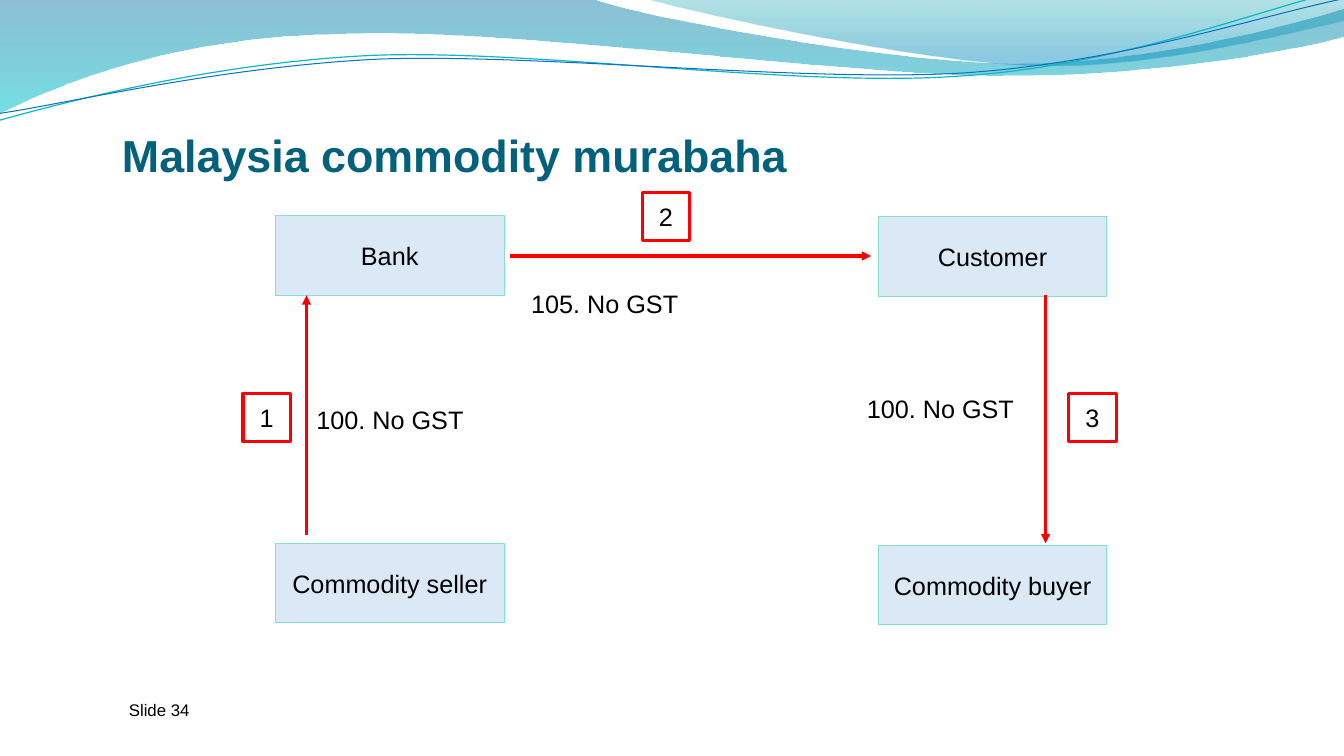
import pptx
import pptx.util
import pptx.dml.color
import pptx.enum.shapes
import pptx.enum.text
import pptx.oxml
import pptx.oxml.ns

Inches = pptx.util.Inches
ANCHOR = pptx.enum.text.MSO_ANCHOR
ALIGN = pptx.enum.text.PP_ALIGN
RECTANGLE = pptx.enum.shapes.MSO_SHAPE.RECTANGLE
STRAIGHT = pptx.enum.shapes.MSO_CONNECTOR.STRAIGHT
QN = pptx.oxml.ns.qn

COLORS = {name: pptx.dml.color.RGBColor.from_string(value) for name, value in {
    "title": "04617B", "text": "000000", "arrow": "FF0000",
    "box": "0F6FC6", "box_edge": "85DFD0",
    "wave_top": "0074A1", "wave_bottom": "00C6CF",
    "crest_top": "00A1A9", "crest_bottom": "008BBF",
    "teal_line": "0AB8BF", "blue_line": "0F6FC6",
}.items()}

presentation = pptx.Presentation()
presentation.slide_width = Inches(13.33)
presentation.slide_height = Inches(7.5)
slide = presentation.slides.add_slide(presentation.slide_layouts[6])
shapes = slide.shapes


def write(shape, text, size, color="text", bold=False, align=ALIGN.LEFT):
    frame = shape.text_frame
    frame.text = text
    frame.paragraphs[0].alignment = align
    font = frame.paragraphs[0].runs[0].font
    font.name, font.size, font.bold = "Arial", pptx.util.Pt(size), bold
    font.color.rgb = COLORS[color]
    return frame


def draw_curve(start, segments, closed):
    """Join straight lines (2 numbers) and Bezier curves (6 numbers)."""
    points = [(Inches(segment[i]), Inches(segment[i + 1]))
              for segment in segments for i in range(0, len(segment), 2)]
    builder = shapes.build_freeform(Inches(start[0]), Inches(start[1]))
    builder.add_line_segments(points, close=closed)
    shape = builder.convert_to_shape()
    shape.shadow.inherit = False
    # Merge the three points of each curve into one Bezier element
    steps = iter(list(shape.element.spPr.iter(QN("a:lnTo"))))
    for segment in segments:
        nodes = [next(steps) for _ in range(len(segment) // 2)]
        if len(nodes) == 3:
            curve = nodes[0].makeelement(QN("a:cubicBezTo"), {})
            nodes[0].addprevious(curve)
            for node in nodes:
                curve.append(node[0])
                node.getparent().remove(node)
    return shape


# Header waves: start, segments, gradient stops (position, colour, opacity)
waves = [
    ((0, 0), [(5.87, -0.01),
              (6.34, 0.17, 8.85, 0.63, 10.11, 0.63),
              (11.38, 0.63, 12.78, 0.26, 13.33, 0.09),
              (13.35, 0.36),
              (13.11, 0.44, 11.6, 0.76, 9.94, 0.75),
              (8.29, 0.75, 5.09, 0.28, 3.43, 0.34),
              (1.72, 0.36, 0.61, 0.83, -0.01, 1.13)],
     [(0, "wave_top", 45), (1, "wave_bottom", 55)]),
    ((6.39, -0.01), [(6.79, 0.11, 9.09, 0.62, 10.25, 0.65),
                     (11.41, 0.69, 12.82, 0.32, 13.33, 0.21),
                     (13.33, 0)],
     [(0, "crest_top", 30), (0.8, "crest_bottom", 45)]),
]
for start, segments, stops in waves:
    wave = draw_curve(start, segments, True)
    wave.line.fill.background()
    wave.fill.gradient()
    wave.fill.gradient_angle = 270
    for stop, (position, color, _) in zip(wave.fill.gradient_stops, stops):
        stop.position = position
        stop.color.rgb = COLORS[color]
    for node, (_, _, opacity) in zip(wave.element.spPr.iter(QN("a:srgbClr")), stops):
        node.append(node.makeelement(QN("a:alpha"), {"val": str(opacity * 1000)}))

# Thin lines under the waves, slightly tilted
wave_lines = [
    ((-0.03, 0.88), [(0.63, 0.73, 2.11, 0.41, 3.69, 0.41),
                     (5.28, 0.42, 7.88, 0.93, 9.49, 0.89),
                     (11.09, 0.87, 12.54, 0.36, 13.33, 0.22)], "teal_line", 0.85),
    ((-0.02, 0.81), [(0.62, 0.75, 2.18, 0.45, 3.78, 0.45),
                     (5.37, 0.47, 7.95, 0.88, 9.54, 0.86),
                     (11.14, 0.83, 12.56, 0.42, 13.36, 0.3)], "blue_line", 0.75),
]
for start, segments, color, width in wave_lines:
    wave_line = draw_curve(start, segments, False)
    wave_line.rotation = 357.3
    wave_line.fill.background()
    wave_line.line.color.rgb = COLORS[color]
    wave_line.line.width = pptx.util.Pt(width)

# Title
title = shapes.add_textbox(Inches(1.21), Inches(0.97), Inches(7.43), Inches(0.83))
frame = write(title, "Malaysia commodity murabaha", 32, "title", bold=True)
frame.word_wrap = True
frame.vertical_anchor = ANCHOR.BOTTOM
frame.margin_left = frame.margin_right = frame.margin_bottom = 0

# Parties and step numbers: text, left, top
left_column, right_column, badge_row = 2.73, 8.71, 3.9
parties = [("Bank", left_column, 2.14), ("Commodity seller", left_column, 5.39),
           ("Commodity buyer", right_column, 5.41), ("Customer", right_column, 2.15)]
badges = [("1", 2.41, badge_row), ("3", 10.6, badge_row), ("2", 6.37, 1.91)]
for group, width, height, edge, edge_width in (
        (parties, 2.27, 0.79, "box_edge", 0.75), (badges, 0.47, 0.48, "arrow", 2.25)):
    for text, left, top in group:
        box = shapes.add_shape(RECTANGLE, Inches(left), Inches(top),
                               Inches(width), Inches(height))
        box.shadow.inherit = False
        box.line.color.rgb = COLORS[edge]
        box.line.width = pptx.util.Pt(edge_width)
        if group is parties:
            box.fill.solid()
            box.fill.fore_color.rgb = COLORS["box"]
            node = box.element.spPr.find(QN("a:solidFill")).find(QN("a:srgbClr"))
            node.append(node.makeelement(QN("a:alpha"), {"val": "15000"}))
        else:
            box.fill.background()
        frame = write(box, text, 18, align=ALIGN.CENTER)
        frame.word_wrap = False
        frame.vertical_anchor = ANCHOR.MIDDLE
        frame.margin_left = frame.margin_right = Inches(0.07)
        frame.margin_top = frame.margin_bottom = 0

# Arrows: from x, from y, to x, to y
for ends in ((10.37, 2.93, 10.37, 5.39), (3.04, 5.31, 3.04, 2.93),
             (5.06, 2.54, 8.64, 2.54)):
    arrow = shapes.add_connector(STRAIGHT, *[Inches(end) for end in ends])
    arrow.line.color.rgb = COLORS["arrow"]
    arrow.line.width = pptx.util.Pt(2.25)
    properties = arrow.element.spPr
    outline = properties.find(QN("a:ln"))
    outline.append(outline.makeelement(QN("a:tailEnd"), {"type": "triangle"}))
    properties.append(properties.makeelement(QN("a:effectLst"), {}))

# Labels and slide number: text, left, top, width, size
for text, left, top, width, size in (
        ("100. No GST", 3.04, 3.96, 2.31, 18), ("105. No GST", 5.17, 2.81, 3.15, 18),
        ("100. No GST", 8.5, 3.85, 1.86, 18), ("Slide 34", 1.18, 6.89, 2.33, 12)):
    label = shapes.add_textbox(Inches(left), Inches(top), Inches(width), Inches(0.4))
    write(label, text, size).word_wrap = True

presentation.save("out.pptx")
